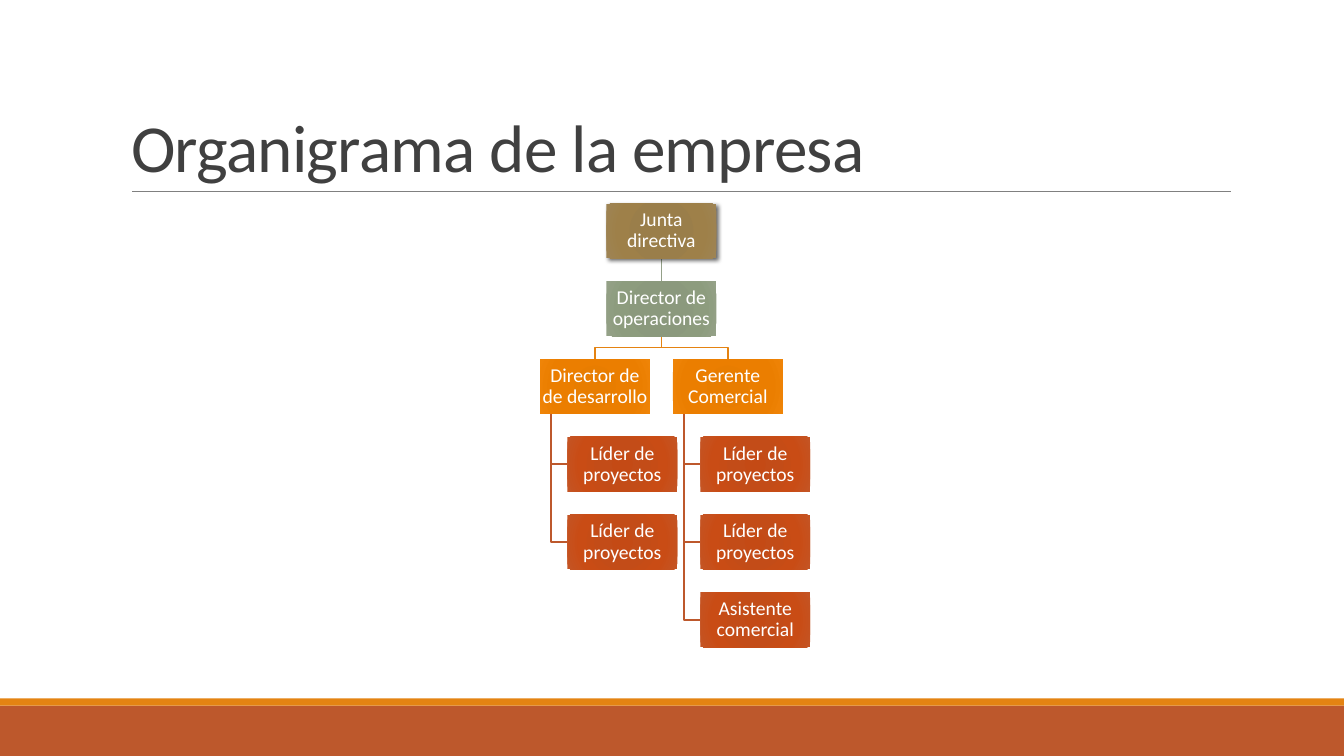
from lxml.etree import SubElement
from pptx import Presentation
from pptx.dml.color import RGBColor
from pptx.enum.shapes import MSO_CONNECTOR, MSO_SHAPE
from pptx.enum.text import MSO_ANCHOR as ANCHOR, MSO_AUTO_SIZE, PP_ALIGN as ALIGN
from pptx.oxml.ns import qn
from pptx.util import Cm, Pt

TITLE = "Organigrama de la empresa"
HEADS = ["Junta directiva", "Director de operaciones"]
BRANCHES = [
    ("Director de de desarrollo", ["Líder de proyectos", "Líder de proyectos"]),
    ("Gerente Comercial",
     ["Líder de proyectos", "Líder de proyectos", "Asistente comercial"]),
]
FONT = "Calibri"
ORANGE, RUST, SAGE = "E48312", "BD582C", "94A088"
STOPS = [0, 34, 70, 100]
BOARD_FILL = ["9A7D48", "9A7E4A", "9E8049", "9E8454"]
OPERATIONS_FILL = ["8A987B", "8B997D", "8D9C7E", "94A187"]
MANAGER_FILL = ["E57B00", "E87D00", "EB7E00", "EF8407"]
STAFF_FILL = ["C44A15", "C34C18", "C94C15", "C45525"]

# Chart geometry in centimetres
BOX_W, BOX_H = 2.77, 1.38
LEFT, TOP = 13.61, 5.13
COL_STEP, ROW_STEP = 3.35, 1.96
INDENT, STEM = 0.69, 0.28
HEAD_LEFT = LEFT + COL_STEP / 2


def rgb(value):
    return RGBColor.from_string(value)


def row_top(row):
    return TOP + row * ROW_STEP


def write(tf, text, size, color, align=ALIGN.LEFT, anchor=ANCHOR.MIDDLE,
          line_spacing=0.9, spacing=None):
    tf.word_wrap, tf.vertical_anchor = True, anchor
    tf.auto_size = MSO_AUTO_SIZE.NONE
    p = tf.paragraphs[0]
    p.alignment, p.line_spacing = align, line_spacing
    r = p.add_run()
    r.text = text
    r.font.name, r.font.size, r.font.color.rgb = FONT, Pt(size), rgb(color)
    if spacing is not None:
        r.font._element.set("spc", str(int(spacing * 100)))


def add_rect(shapes, x, y, w, h, fill=None):
    s = shapes.add_shape(MSO_SHAPE.RECTANGLE, Cm(x), Cm(y), Cm(w), Cm(h))
    s.shadow.inherit = False
    s.line.fill.background()
    if fill:
        s.fill.solid()
        s.fill.fore_color.rgb = rgb(fill)
    return s


def radial_fill(s, colors):
    s.fill.gradient()
    grad = s._element.spPr.find(qn("a:gradFill"))
    for child in list(grad):
        grad.remove(child)
    stops = SubElement(grad, qn("a:gsLst"))
    for pos, color in zip(STOPS, colors):
        gs = SubElement(stops, qn("a:gs"), pos=str(pos * 1000))
        SubElement(gs, qn("a:srgbClr"), val=color)
    focus = SubElement(grad, qn("a:path"), path="circle")
    SubElement(focus, qn("a:fillToRect"), dict.fromkeys("ltrb", "100000"))


def cast_shadow(s):
    effects = s._element.spPr.find(qn("a:effectLst"))
    shadow = SubElement(effects, qn("a:outerShdw"), blurRad=str(Pt(3)),
                        dist=str(Pt(2)), dir="2700000", rotWithShape="0")
    color = SubElement(shadow, qn("a:srgbClr"), val="000000")
    SubElement(color, qn("a:alpha"), val="60000")


def add_box(shapes, x, row, text, colors):
    s = add_rect(shapes, x, row_top(row), BOX_W, BOX_H)
    radial_fill(s, colors)
    tf = s.text_frame
    tf.margin_left = tf.margin_right = tf.margin_top = tf.margin_bottom = Cm(0.03)
    write(tf, text, 14, "FFFFFF", align=ALIGN.CENTER)
    return s


def add_line(shapes, x1, y1, x2, y2, color, width):
    c = shapes.add_connector(MSO_CONNECTOR.STRAIGHT, Cm(x1), Cm(y1), Cm(x2), Cm(y2))
    c.line.color.rgb, c.line.width = rgb(color), Pt(width)
    SubElement(c._element.spPr, qn("a:effectLst"))


def add_elbow(shapes, points, color):
    """Draw an open bent line through points given in centimetres."""
    (x, y), *rest = [(Cm(px), Cm(py)) for px, py in points]
    builder = shapes.build_freeform(x, y)
    builder.add_line_segments(rest, close=False)
    s = builder.convert_to_shape()
    s.shadow.inherit = False
    s.fill.background()
    s.line.color.rgb, s.line.width = rgb(color), Pt(1.25)


def add_links(shapes):
    middle = HEAD_LEFT + BOX_W / 2
    add_line(shapes, middle, row_top(0) + BOX_H, middle, row_top(1), SAGE, 1.25)
    fork_top = row_top(1) + BOX_H
    fork_mid = (fork_top + row_top(2)) / 2
    for col, (_, staff) in enumerate(BRANCHES):
        x = LEFT + col * COL_STEP
        center, stem = x + BOX_W / 2, x + STEM
        add_elbow(shapes, [(middle, fork_top), (middle, fork_mid),
                           (center, fork_mid), (center, row_top(2))], ORANGE)
        for row in range(3, 3 + len(staff)):
            y = row_top(row) + BOX_H / 2
            add_elbow(shapes, [(stem, row_top(2) + BOX_H), (stem, y),
                               (x + INDENT, y)], RUST)


def add_boxes(shapes):
    board, operations = HEADS
    cast_shadow(add_box(shapes, HEAD_LEFT, 0, board, BOARD_FILL))
    add_box(shapes, HEAD_LEFT, 1, operations, OPERATIONS_FILL)
    for col, (manager, staff) in enumerate(BRANCHES):
        x = LEFT + col * COL_STEP
        add_box(shapes, x, 2, manager, MANAGER_FILL)
        for row, name in enumerate(staff, 3):
            add_box(shapes, x + INDENT, row, name, STAFF_FILL)


def main():
    prs = Presentation()
    prs.slide_width, prs.slide_height = Cm(33.87), Cm(19.05)
    shapes = prs.slides.add_slide(prs.slide_layouts[5]).shapes
    title = shapes.title
    title.left, title.top, title.width, title.height = Cm(3.05), Cm(0.79), Cm(27.94), Cm(4.04)
    write(title.text_frame, TITLE, 48, "404040", anchor=ANCHOR.BOTTOM,
          line_spacing=0.85, spacing=-0.5)
    add_rect(shapes, 0, 17.78, 33.87, 1.27, RUST)
    add_rect(shapes, 0, 17.6, 33.87, 0.18, ORANGE)
    add_line(shapes, 3.33, 4.83, 31.01, 4.83, "808080", 0.5)
    add_links(shapes)
    add_boxes(shapes)
    prs.save("out.pptx")


if __name__ == "__main__":
    main()
